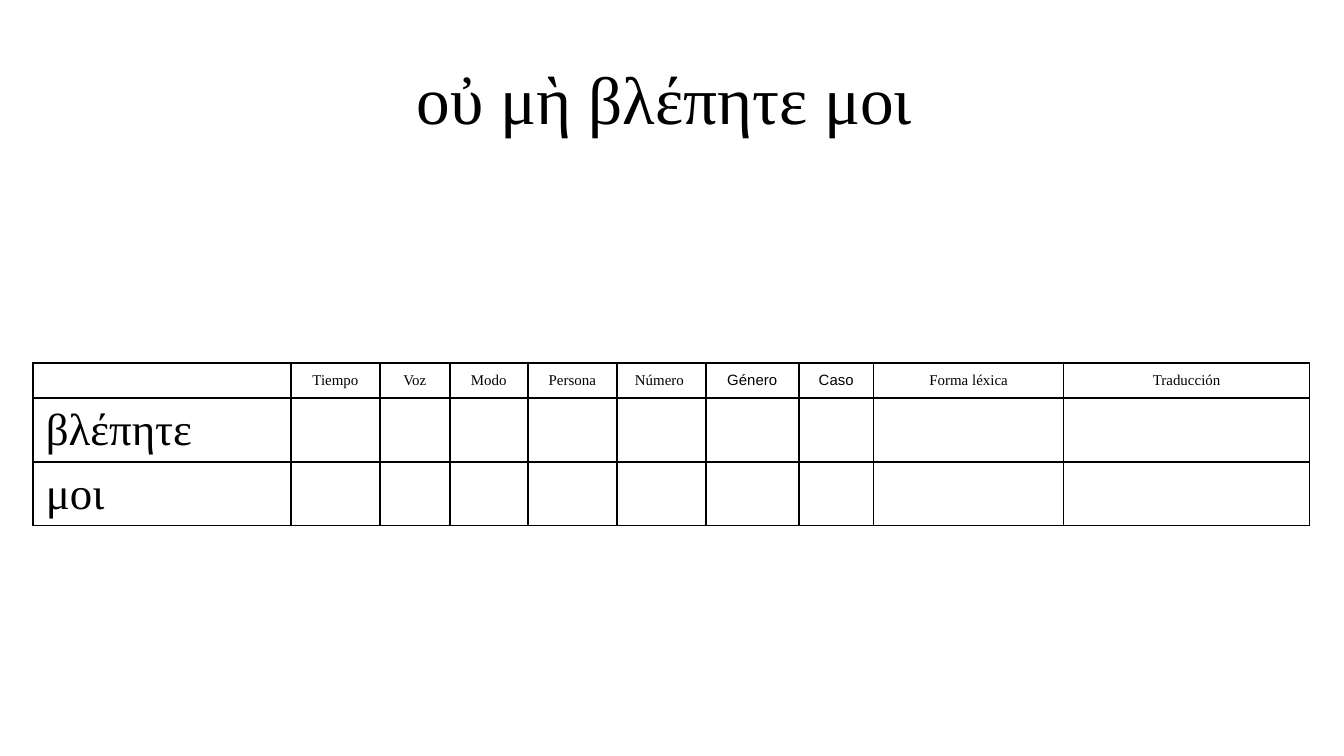
from dataclasses import dataclass
from itertools import product

from lxml import etree
from pptx import Presentation
from pptx.dml.color import RGBColor
from pptx.enum.text import MSO_ANCHOR, PP_ALIGN
from pptx.oxml.ns import qn
from pptx.util import Pt

MIDDLE = MSO_ANCHOR.MIDDLE
CENTER = PP_ALIGN.CENTER
LEFT = PP_ALIGN.LEFT
PX = 914400 / 134.4


@dataclass(frozen=True)
class Theme:
    ink: RGBColor = RGBColor(0, 0, 0)
    serif: str = "Times New Roman"
    sans: str = "Arial"
    title_size: int = 36
    word_size: int = 24
    header_size: int = 8
    outer_line: float = 1
    row_line: float = 0.75


THEME = Theme()
PHRASE = "οὐ μὴ βλέπητε μοι "
COLUMNS = [
    ("", 258, THEME.serif),
    ("Tiempo", 89, THEME.serif),
    ("Voz", 70, THEME.serif),
    ("Modo", 78, THEME.serif),
    ("Persona", 89, THEME.serif),
    ("Número ", 89, THEME.serif),
    ("Género", 93, THEME.sans),
    ("Caso", 75, THEME.sans),
    ("Forma léxica", 190, THEME.serif),
    ("Traducción", 246, THEME.serif),
]
WORDS = ["βλέπητε", "μοι"]
HEADER_HEIGHT = 35
WORD_HEIGHT = 64


def px(length):
    return round(length * PX)


def write(frame, text, size, font=THEME.serif, align=CENTER):
    paragraph = frame.paragraphs[0]
    paragraph.alignment = align
    if not text:
        etree.SubElement(paragraph._p, qn("a:endParaRPr"), sz=str(size * 100))
        return
    run = paragraph.add_run()
    run.text = text
    run.font.size = Pt(size)
    run.font.name = font
    run.font.bold = False
    run.font.color.rgb = THEME.ink


def rule_cell(cell, widths):
    properties = cell._tc.get_or_add_tcPr()
    for position, (side, width) in enumerate(widths.items()):
        line = etree.Element(qn(f"a:{side}"), w=str(Pt(width)))
        fill = etree.SubElement(line, qn("a:solidFill"))
        etree.SubElement(fill, qn("a:srgbClr"), val=str(THEME.ink))
        properties.insert(position, line)


def place_title(slide, left, top, width, height):
    title = slide.shapes.title
    title.left, title.top = px(left), px(top)
    title.width, title.height = px(width), px(height)
    title.text_frame.word_wrap = True
    title.text_frame.vertical_anchor = MIDDLE
    write(title.text_frame, PHRASE, THEME.title_size)


def place_parsing_table(slide, left, top):
    heights = [HEADER_HEIGHT] + [WORD_HEIGHT] * len(WORDS)
    widths = [width for _, width, _ in COLUMNS]
    table = slide.shapes.add_table(
        len(heights), len(widths), px(left), px(top), px(sum(widths)), px(sum(heights))
    ).table
    table.first_row = False
    table.horz_banding = False
    for column, width in zip(table.columns, widths):
        column.width = px(width)
    for row, height in zip(table.rows, heights):
        row.height = px(height)

    for row, column in product(range(len(heights)), range(len(widths))):
        cell = table.cell(row, column)
        cell.margin_left = cell.margin_right = px(13)
        cell.margin_top = cell.margin_bottom = px(5)
        cell.vertical_anchor = MIDDLE
        cell.fill.background()
        rule_cell(cell, {
            "lnL": THEME.outer_line,
            "lnR": THEME.outer_line,
            "lnT": THEME.row_line if row else THEME.outer_line,
            "lnB": THEME.row_line,
        })
        if row == 0:
            heading, _, font = COLUMNS[column]
            write(cell.text_frame, heading, THEME.header_size, font=font)
        else:
            word = WORDS[row - 1] if column == 0 else ""
            size = THEME.word_size if word else THEME.header_size
            write(cell.text_frame, word, size, align=LEFT)


def main():
    presentation = Presentation()
    presentation.slide_width = px(1344)
    presentation.slide_height = px(756)
    slide = presentation.slides.add_slide(presentation.slide_layouts[5])
    place_title(slide, 23, 50, 1300, 95)
    place_parsing_table(slide, 33, 363)
    presentation.save("out.pptx")


if __name__ == "__main__":
    main()
